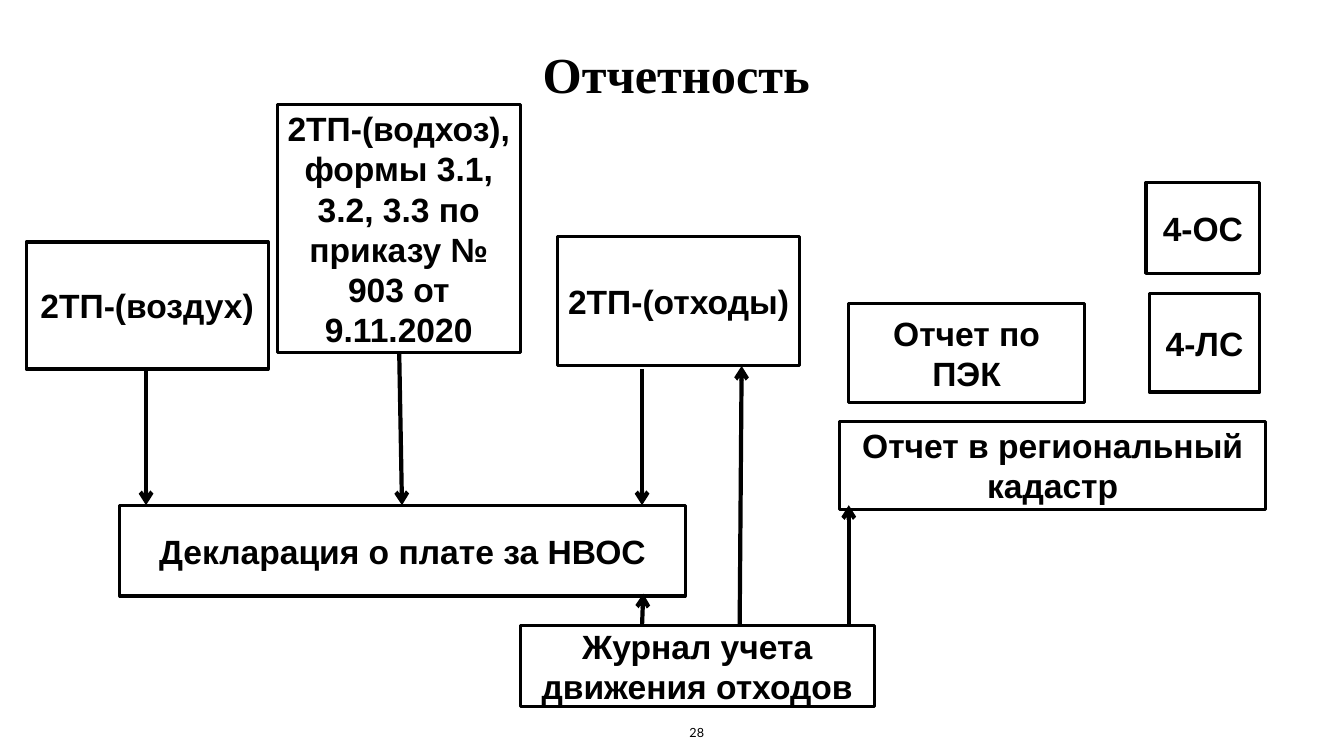
import pptx
import pptx.dml.color
import pptx.enum.shapes
import pptx.enum.text
import pptx.oxml
import pptx.oxml.ns
import pptx.util
from dataclasses import dataclass

Cm = pptx.util.Cm
Pt = pptx.util.Pt


@dataclass(frozen=True)
class Theme:
    ink: str = "000000"
    paper: str = "FFFFFF"
    title_font: str = "Times New Roman"
    body_font: str = "Arial"
    number_font: str = "Lato"
    title_size: float = 36
    body_size: float = 24
    number_size: float = 9
    border: float = 2.25
    arrow: float = 3
    inset: float = 0.23

    def color(self, value):
        return pptx.dml.color.RGBColor.from_string(value)


class ReportSlide:
    def __init__(self, deck, theme):
        self.theme = theme
        self.slide = deck.slides.add_slide(deck.slide_layouts[5])

    def set_text(self, shape, text, font, size, bold=True):
        frame = shape.text_frame
        frame.text = text
        frame.word_wrap = True
        frame.auto_size = pptx.enum.text.MSO_AUTO_SIZE.NONE
        frame.vertical_anchor = pptx.enum.text.MSO_ANCHOR.MIDDLE
        frame.margin_left = frame.margin_right = Cm(self.theme.inset)
        paragraph = frame.paragraphs[0]
        paragraph.alignment = pptx.enum.text.PP_ALIGN.CENTER
        paragraph.font.name = font
        paragraph.font.size = Pt(size)
        paragraph.font.bold = bold
        paragraph.font.color.rgb = self.theme.color(self.theme.ink)

    def outline(self, shape, line_color, filled=True):
        if filled:
            shape.fill.solid()
            shape.fill.fore_color.rgb = self.theme.color(self.theme.paper)
        else:
            shape.fill.background()
        shape.line.color.rgb = self.theme.color(line_color)
        shape.line.width = Pt(self.theme.border)

    def title(self, text, left, top, width, height):
        heading = self.slide.shapes.title
        heading.left, heading.top = Cm(left), Cm(top)
        heading.width, heading.height = Cm(width), Cm(height)
        self.outline(heading, self.theme.paper)
        self.set_text(heading, text, self.theme.title_font,
                      self.theme.title_size)

    def box(self, text, left, top, width, height, filled=True):
        report = self.slide.shapes.add_shape(
            pptx.enum.shapes.MSO_SHAPE.RECTANGLE,
            Cm(left), Cm(top), Cm(width), Cm(height))
        report.shadow.inherit = False
        self.outline(report, self.theme.ink, filled)
        self.set_text(report, text, self.theme.body_font,
                      self.theme.body_size)

    def arrow(self, x1, y1, x2, y2):
        flow = self.slide.shapes.add_connector(
            pptx.enum.shapes.MSO_CONNECTOR.STRAIGHT,
            Cm(x1), Cm(y1), Cm(x2), Cm(y2))
        flow.line.color.rgb = self.theme.color(self.theme.ink)
        flow.line.width = Pt(self.theme.arrow)
        line = flow.line._get_or_add_ln()
        line.append(pptx.oxml.parse_xml(
            f'<a:tailEnd {pptx.oxml.ns.nsdecls("a")} type="arrow"/>'))
        line.addnext(pptx.oxml.parse_xml(
            f'<a:effectLst {pptx.oxml.ns.nsdecls("a")}/>'))

    def page_number(self, text, left, top, width, height):
        number = self.slide.shapes.add_textbox(
            Cm(left), Cm(top), Cm(width), Cm(height))
        self.set_text(number, text, self.theme.number_font,
                      self.theme.number_size, bold=False)


def main():
    deck = pptx.Presentation()
    deck.slide_width, deck.slide_height = Cm(33.87), Cm(19.05)
    page = ReportSlide(deck, Theme())

    page.title("Отчетность", 8.74, 0.69, 16.61, 2.34)

    # Reports: text, left, top, width, height, filled
    reports = [
        ("2ТП-(водхоз), формы 3.1, 3.2, 3.3 по приказу № 903 от 9.11.2020",
         6.99, 2.64, 6.12, 6.25, False),
        ("2ТП-(отходы)", 14.05, 5.97, 6.1, 3.25, True),
        ("2ТП-(воздух)", 0.66, 6.1, 6.1, 3.2, True),
        ("4-ОС", 28.88, 4.6, 2.87, 2.29, False),
        ("4-ЛС", 28.96, 7.39, 2.79, 2.49, True),
        ("Отчет в региональный кадастр", 21.16, 10.62, 10.74, 2.21, False),
        ("Декларация о плате за НВОС", 3.02, 12.73, 14.25, 2.29, True),
        ("Журнал учета движения отходов", 13.11, 15.77, 8.92, 2.03, False),
        ("Отчет по ПЭК", 21.39, 7.65, 5.94, 2.49, True),
    ]
    for report in reports:
        page.box(*report)

    # Reports feeding the declaration
    declaration_top = 12.73
    for x1, y1, x2 in [(3.68, 9.3, 3.68), (10.06, 8.86, 10.13),
                       (16.18, 9.3, 16.18)]:
        page.arrow(x1, y1, x2, declaration_top)

    # Waste journal feeding the other reports
    journal_top = 15.77
    for x1, x2, y2 in [(16.18, 16.21, 14.96), (21.39, 21.39, 12.73),
                       (18.64, 18.69, 9.22)]:
        page.arrow(x1, journal_top, x2, y2)

    page.page_number("28", 16.61, 17.96, 1.9, 1.02)
    deck.save("out.pptx")


if __name__ == "__main__":
    main()
